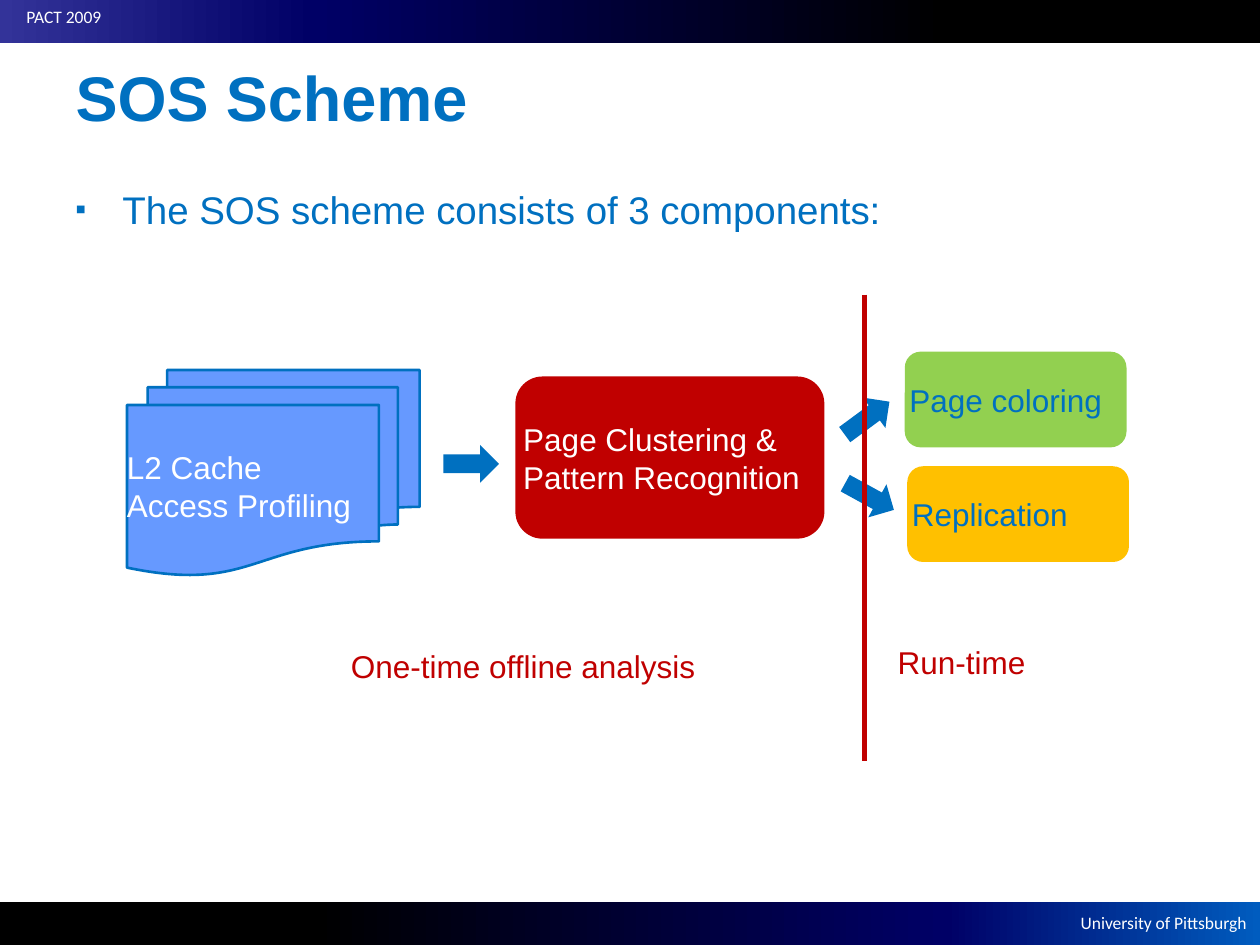
from copy import deepcopy
from lxml import etree
from pptx import Presentation
from pptx.dml.color import RGBColor
from pptx.enum import shapes, text
from pptx.oxml import ns
from pptx.util import Cm, Pt

BLUE = RGBColor(0x00, 0x70, 0xC0)
SKY = RGBColor(0x66, 0x99, 0xFF)
RED = RGBColor(0xC0, 0x00, 0x00)
GREEN = RGBColor(0x92, 0xD0, 0x50)
GOLD = RGBColor(0xFF, 0xC0, 0x00)
WHITE = RGBColor(0xFF, 0xFF, 0xFF)
BLACK = RGBColor(0x00, 0x00, 0x00)
NAVY = RGBColor(0x00, 0x00, 0x66)
OCEAN = RGBColor(0x00, 0x5C, 0xBF)
INDIGO = RGBColor(0x33, 0x33, 0x99)

KIND = shapes.MSO_SHAPE
ALIGN = text.PP_ALIGN
LEFT = ALIGN.LEFT
WIDE, HIGH = 25.4, 19.05
BAR = 0.86


def write(frame, words, size, color, align=LEFT, name="Arial", bold=False):
    frame.text = words
    for para in frame.paragraphs:
        para.alignment = align
        for run in para.runs:
            font = run.font
            font.name, font.size, font.bold = name, Pt(size), bold
            font.color.rgb = color


def add_shape(slide, kind, box, fill=None, line=None):
    shape = slide.shapes.add_shape(kind, *map(Cm, box))
    shape.shadow.inherit = False
    if fill is None:
        shape.fill.background()
    else:
        shape.fill.solid()
        shape.fill.fore_color.rgb = fill
    if line is None:
        shape.line.fill.background()
    else:
        shape.line.color.rgb = line
        shape.line.width = Pt(1.5)
    return shape


def add_block(slide, kind, box, words, color, fill=None, line=None):
    frame = add_shape(slide, kind, box, fill, line).text_frame
    frame.margin_left = frame.margin_right = 0
    frame.margin_top = frame.margin_bottom = 0
    frame.word_wrap = False
    frame.vertical_anchor = text.MSO_ANCHOR.MIDDLE
    write(frame, words, 18, color)


def add_arrow(slide, left, top, turn=0):
    arrow = add_shape(slide, KIND.RIGHT_ARROW, (left, top, 1.12, 0.76), BLUE)
    arrow.rotation = turn


def add_bar(slide, top, colors):
    fill = add_shape(slide, KIND.RECTANGLE, (0, top, WIDE, BAR)).fill
    fill.gradient()
    fill.gradient_angle = 0
    first = fill.gradient_stops[0].color
    first.rgb = BLACK
    stops = fill._fill._gradFill.gsLst
    for old in list(stops)[1:]:
        stops.remove(old)
    for _ in colors[1:]:
        stops.append(deepcopy(stops[0]))
    for stop, spot, color in zip(fill.gradient_stops, (0, 0.25, 0.75, 1), colors):
        stop.position = spot
        stop.color.rgb = color


def add_tag(slide, box, words):
    frame = slide.shapes.add_textbox(*map(Cm, box)).text_frame
    frame.word_wrap = False
    write(frame, words, 10, WHITE, ALIGN.RIGHT, "Calibri")


def add_title(slide, words):
    title = slide.shapes.title
    title.left, title.top, title.width, title.height = map(Cm, (1.27, 0.36, 22.86, 3.18))
    title.text_frame.vertical_anchor = text.MSO_ANCHOR.MIDDLE
    write(title.text_frame, words, 36, BLUE, bold=True)


def add_point(slide, words):
    box = slide.shapes.add_textbox(Cm(1.27), Cm(3.63), Cm(22.86), Cm(13.72))
    frame = box.text_frame
    frame.word_wrap = True
    write(frame, words, 22, BLUE)
    props = frame.paragraphs[0]._p.get_or_add_pPr()
    props.set("marL", str(Cm(0.95)))
    props.set("indent", str(Cm(-0.95)))
    tint = etree.SubElement(props, ns.qn("a:buClr"))
    etree.SubElement(tint, ns.qn("a:srgbClr"), val=str(BLUE))
    etree.SubElement(props, ns.qn("a:buSzPct"), val="80000")
    etree.SubElement(props, ns.qn("a:buFont"), typeface="Arial")
    etree.SubElement(props, ns.qn("a:buChar"), char="▪")


def add_rule(slide, x, top, end):
    rule = slide.shapes.add_connector(
        shapes.MSO_CONNECTOR.STRAIGHT, Cm(x), Cm(top), Cm(x), Cm(end))
    rule.line.color.rgb = RED
    rule.line.width = Pt(3)
    etree.SubElement(rule._element.spPr, ns.qn("a:effectLst"))


def main():
    deck = Presentation()
    deck.slide_width, deck.slide_height = Cm(WIDE), Cm(HIGH)
    slide = deck.slides.add_slide(deck.slide_layouts[5])

    add_bar(slide, HIGH - BAR, (BLACK, BLACK, NAVY, OCEAN))
    add_tag(slide, (21.16, 18.26, 4.22, 0.69), "University of Pittsburgh")
    add_bar(slide, 0, (INDIGO, NAVY, BLACK, BLACK))
    add_tag(slide, (0, 0, 2.29, 0.69), "PACT 2009")

    add_title(slide, "SOS Scheme")
    add_point(slide, "The SOS scheme consists of 3 components:")

    add_block(slide, KIND.FLOWCHART_MULTIDOCUMENT, (2.56, 7.46, 5.9, 4.14),
              "L2 Cache\nAccess Profiling", WHITE, SKY, BLUE)
    cards = (
        ((10.39, 7.59, 6.23, 3.27), "Page Clustering &\nPattern Recognition", WHITE, RED),
        ((18.24, 7.09, 4.47, 1.93), "Page coloring", BLUE, GREEN),
        ((18.29, 9.4, 4.47, 1.93), "Replication", BLUE, GOLD),
        ((7.01, 12.73, 7.14, 1.37), "One-time offline analysis", RED, None),
        ((18.03, 12.65, 4.72, 1.37), "Run-time", RED, None),
    )
    for box, words, color, fill in cards:
        add_block(slide, KIND.ROUNDED_RECTANGLE, box, words, color, fill)
    for spot in ((8.94, 8.97), (16.92, 8.05, 323.6), (16.97, 9.63, 28.8)):
        add_arrow(slide, *spot)
    add_rule(slide, 17.42, 5.94, 15.34)

    deck.save("out.pptx")


if __name__ == "__main__":
    main()
